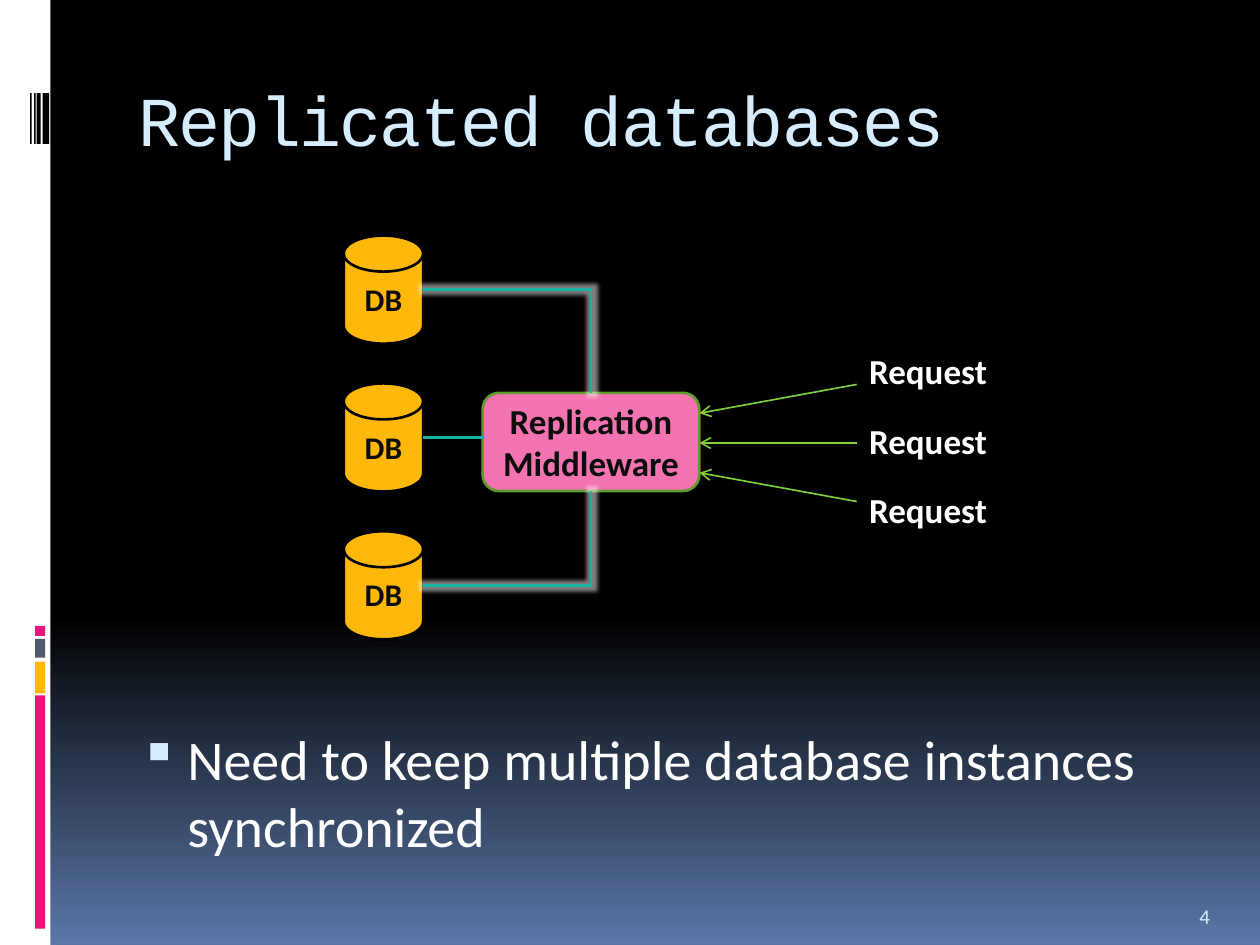
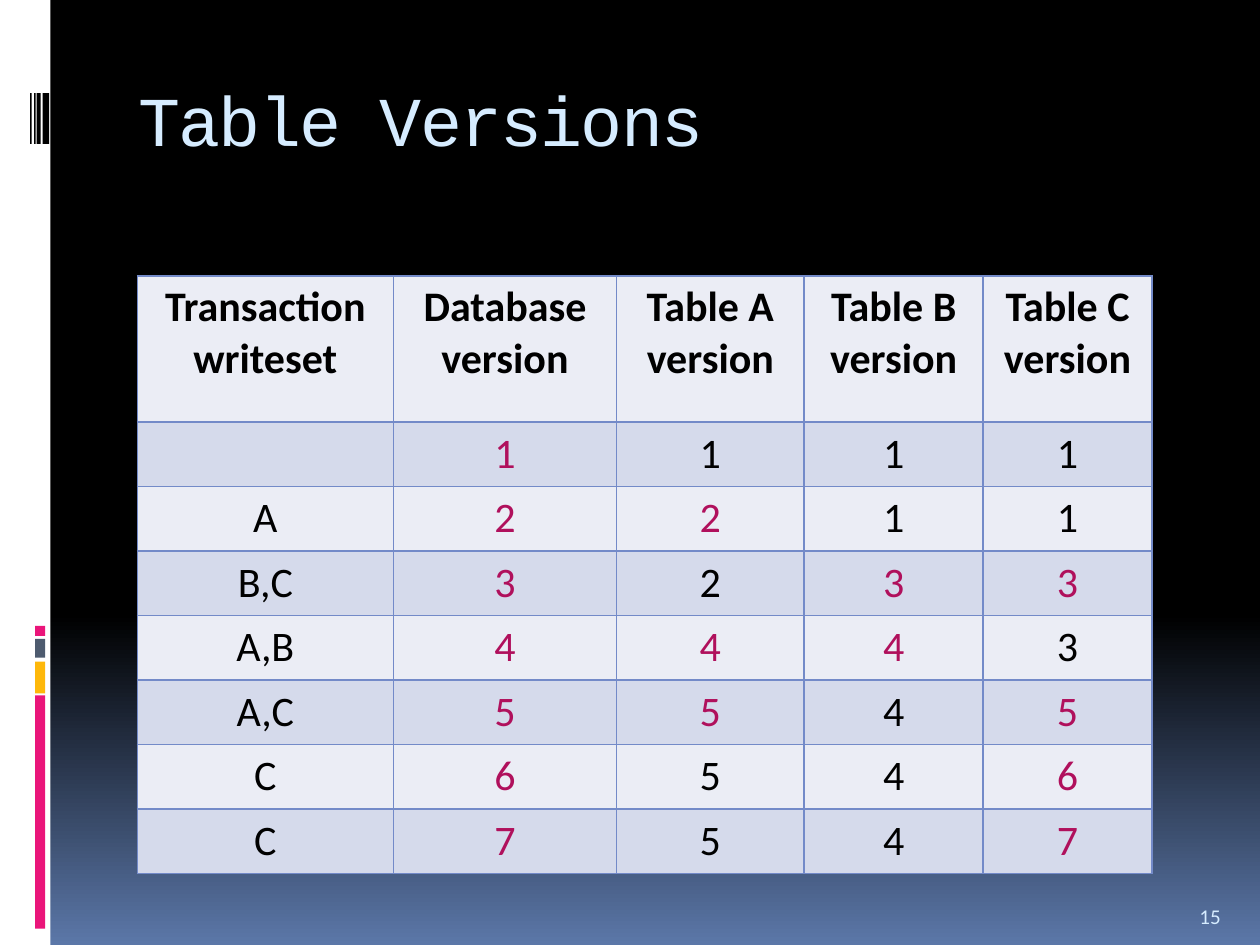
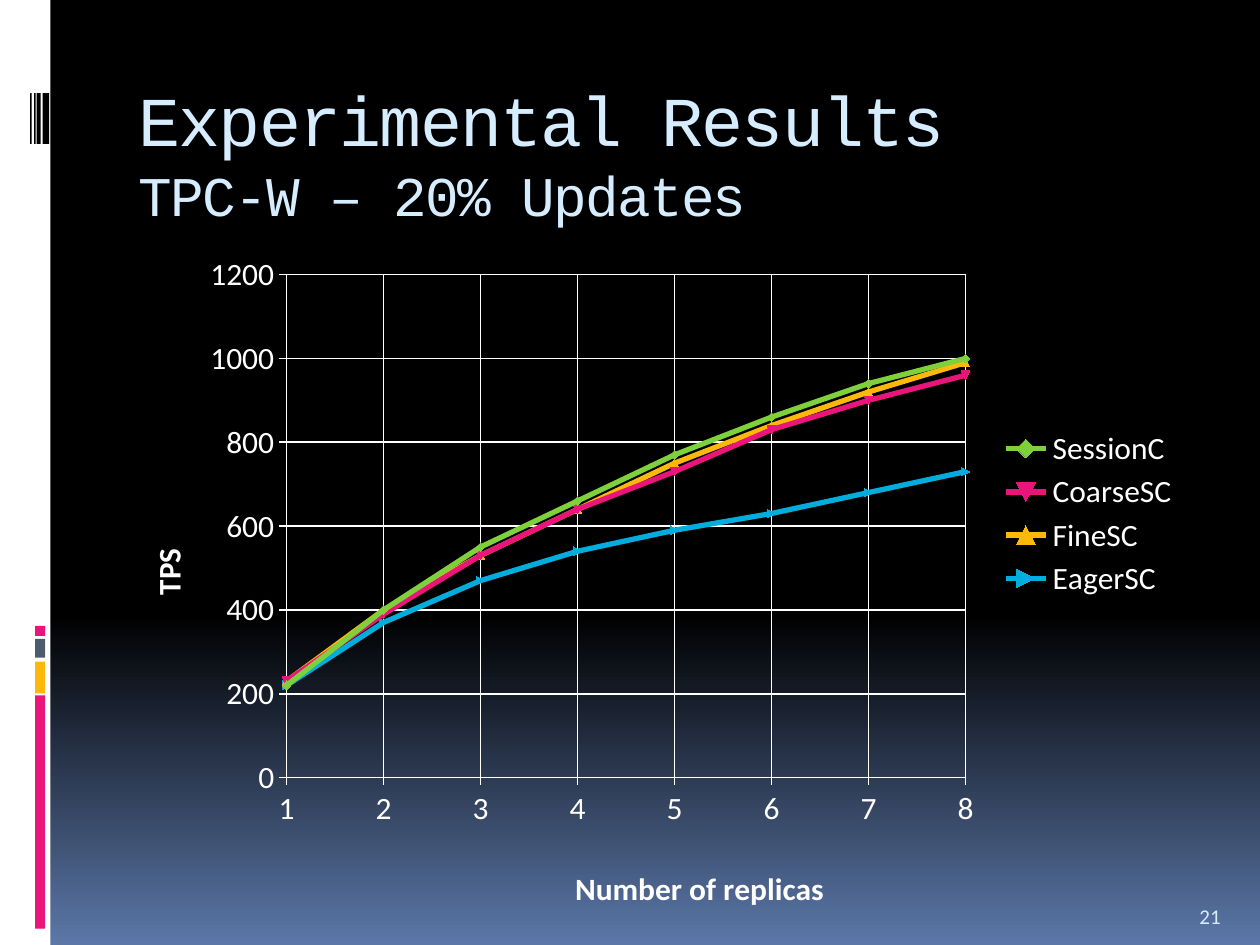
"""Builds three slides on replicated databases: a diagram, a table and a chart."""
import copy

import lxml.etree
import pptx
import pptx.chart.data
import pptx.dml.color
import pptx.enum.chart
import pptx.enum.shapes
import pptx.enum.text
import pptx.oxml.ns
import pptx.util

Cm, Pt = pptx.util.Cm, pptx.util.Pt
RGBColor = pptx.dml.color.RGBColor
SHAPE = pptx.enum.shapes.MSO_SHAPE
CONNECTOR = pptx.enum.shapes.MSO_CONNECTOR
ANCHOR = pptx.enum.text.MSO_ANCHOR
CENTER = pptx.enum.text.PP_ALIGN.CENTER
qn = pptx.oxml.ns.qn

BLACK = RGBColor(0x00, 0x00, 0x00)
WHITE = RGBColor(0xFF, 0xFF, 0xFF)
INK = RGBColor(0x0D, 0x0D, 0x0D)
SKY = RGBColor(0xD6, 0xEC, 0xFF)
DUSK = RGBColor(0x5B, 0x77, 0xA8)
MAGENTA = RGBColor(0xEA, 0x15, 0x7A)
PINK = RGBColor(0xF2, 0x73, 0xAF)
BERRY = RGBColor(0xB0, 0x10, 0x5C)
AMBER = RGBColor(0xFE, 0xB8, 0x0A)
SLATE = RGBColor(0x4E, 0x5B, 0x6F)
GREEN = RGBColor(0x7F, 0xD1, 0x3B)
DARK_GREEN = RGBColor(0x5E, 0x9B, 0x2C)
TEAL = RGBColor(0x1A, 0xB3, 0x9F)
BLUE = RGBColor(0x00, 0xAD, 0xDC)
GRID_BLUE = RGBColor(0x73, 0x8A, 0xC8)
ROW_FILLS = RGBColor(0xEB, 0xED, 0xF5), RGBColor(0xD5, 0xDA, 0xEB)

BODY_FONT, TITLE_FONT = "Calibri", "Courier New"

SIDE_BARS = [
    (0, 0, 1.02, 19.05, WHITE),
    (0.71, 14.02, 0.2, 4.7, MAGENTA),
    (0.71, 13.34, 0.2, 0.64, AMBER),
    (0.71, 12.88, 0.2, 0.38, SLATE),
    (0.71, 12.62, 0.2, 0.2, MAGENTA),
] + [(x, 1.88, width, 1.02, BLACK)
     for x, width in [(0.86, 0.13), (0.74, 0.08), (0.69, 0.03), (0.61, 0.03)]]

DATABASES = ["DB", "DB", "DB"]
REQUESTS = ["Request", "Request", "Request"]
MIDDLEWARE = "Replication Middleware"
SYNC_POINT = "Need to keep multiple database instances synchronized"

VERSION_HEADINGS = ["Transaction\nwriteset", "Database version", "Table A version",
                    "Table B version", "Table C version"]
VERSIONS = [
    ("", 1, 1, 1, 1),
    ("A", 2, 2, 1, 1),
    ("B,C", 3, 2, 3, 3),
    ("A,B", 4, 4, 4, 3),
    ("A,C", 5, 5, 4, 5),
    ("C", 6, 5, 4, 6),
    ("C", 7, 5, 4, 7),
]
COLUMN_WIDTHS = [5.16, 4.5, 3.78, 3.61, 3.4]
HEADING_HEIGHT, ROW_HEIGHT = 2.95, 1.3

THROUGHPUT = [
    ("SessionC", GREEN, [220, 400, 550, 660, 770, 860, 940, 1000]),
    ("CoarseSC", MAGENTA, [230, 390, 530, 640, 730, 830, 900, 960]),
    ("FineSC", AMBER, [230, 400, 530, 640, 750, 840, 920, 990]),
    ("EagerSC", BLUE, [220, 370, 470, 540, 590, 630, 680, 730]),
]


def cm(*lengths):
    return [Cm(length) for length in lengths]


def style(paragraph, size, color, bold=False, font=BODY_FONT):
    for run in paragraph.runs:
        run.font.size, run.font.bold, run.font.name = Pt(size), bold, font
        run.font.color.rgb = color


def add_text(slide, box, text, size, color, bold=False, font=BODY_FONT, anchor=ANCHOR.TOP):
    frame = slide.shapes.add_textbox(*cm(*box)).text_frame
    frame.word_wrap, frame.vertical_anchor = True, anchor
    frame.text = text
    for paragraph in frame.paragraphs:
        style(paragraph, size, color, bold, font)
    return frame.paragraphs[0]


def add_block(slide, kind, box, fill, outline=None, text="", size=18):
    block = slide.shapes.add_shape(kind, *cm(*box))
    block.shadow.inherit = False
    block.fill.solid()
    block.fill.fore_color.rgb = fill
    if outline is None:
        block.line.fill.background()
    else:
        block.line.color.rgb, block.line.width = outline, Pt(1.5)
    if text:
        block.text_frame.text = text
        block.text_frame.word_wrap = True
        block.text_frame.vertical_anchor = ANCHOR.MIDDLE
        label = block.text_frame.paragraphs[0]
        label.alignment = CENTER
        style(label, size, INK, True)
    return block


def add_line(slide, kind, start, end, color, width):
    line = slide.shapes.add_connector(kind, *cm(*start, *end))
    line.line.color.rgb, line.line.width = color, Pt(width)
    effects = lxml.etree.SubElement(line._element.spPr, qn("a:effectLst"))
    return line, effects


def paint_background(master):
    fill = master.background.fill
    fill.gradient()
    fill.gradient_angle = 270
    stops = master.element.xpath("p:cSld/p:bg//a:gsLst")[0]
    stops.append(copy.deepcopy(stops[-1]))
    for stop, position, color in zip(fill.gradient_stops, (0, 0.65, 1), (BLACK, BLACK, DUSK)):
        stop.position, stop.color.rgb = position, color


def start_slide(deck, number, title, subtitle=""):
    slide = deck.slides.add_slide(deck.slide_layouts[6])
    for *box, color in SIDE_BARS:
        add_block(slide, SHAPE.RECTANGLE, box, color)
    text = f"{title}\v{subtitle}" if subtitle else title
    heading = add_text(slide, (2.54, 1.42, 21.59, 2.54), text, 40, SKY, font=TITLE_FONT)
    for run in heading.runs:
        run._r.get_or_add_rPr().set("spc", "-100")
    if subtitle:
        heading.runs[1].font.size = Pt(32)
    add_text(slide, (23.93, 17.83, 1.27, 1.02), str(number), 12, SKY, anchor=ANCHOR.BOTTOM)
    return slide


def add_bullet(paragraph):
    paragraph.space_before = Pt(7)
    properties = paragraph._p.get_or_add_pPr()
    properties.set("marL", str(Cm(1.14)))
    properties.set("indent", str(-Cm(0.97)))
    color = lxml.etree.SubElement(properties, qn("a:buClr"))
    lxml.etree.SubElement(color, qn("a:srgbClr"), val=str(SKY))
    lxml.etree.SubElement(properties, qn("a:buSzPct"), val="95000")
    lxml.etree.SubElement(properties, qn("a:buChar"), char="▪")


def link_database(slide, database, middleware, site):
    """Draws a glowing line from the right of a database to a side of the middleware."""
    start = database.left + database.width, database.top + database.height // 2
    if site == 1:
        kind, end = CONNECTOR.STRAIGHT, (middleware.left, start[1])
    else:
        edge = middleware.top + (middleware.height if site == 2 else 0)
        kind, end = CONNECTOR.ELBOW, (middleware.left + middleware.width // 2, edge)
    link, effects = add_line(slide, kind, [v / Cm(1) for v in start],
                             [v / Cm(1) for v in end], TEAL, 1.5)
    glow = lxml.etree.SubElement(effects, qn("a:glow"), rad=str(Pt(5)))
    halo = lxml.etree.SubElement(glow, qn("a:srgbClr"), val=str(WHITE))
    lxml.etree.SubElement(halo, qn("a:alpha"), val="50000")
    if kind == CONNECTOR.ELBOW:
        link._element.xpath(".//a:prstGeom")[0].set("prst", "bentConnector2")
        ends = link._element.xpath(".//p:cNvCxnSpPr")[0]
        lxml.etree.SubElement(ends, qn("a:stCxn"), id=str(database.shape_id), idx="4")
        link.end_connect(middleware, site)


def build_diagram(deck):
    slide = start_slide(deck, 4, "Replicated databases")
    add_bullet(add_text(slide, (2.39, 14.48, 21.59, 3.38), SYNC_POINT, 32, WHITE))
    middleware = add_block(slide, SHAPE.ROUNDED_RECTANGLE, (9.73, 7.92, 4.37, 1.98),
                           PINK, DARK_GREEN, MIDDLEWARE, 20)
    for row, name in enumerate(DATABASES):
        database = add_block(slide, SHAPE.FLOWCHART_MAGNETIC_DISK,
                             (6.93, 4.75 + 2.98 * row, 1.6, 2.18), AMBER, BLACK, name)
        link_database(slide, database, middleware, row)
    for row, name in enumerate(REQUESTS):
        add_text(slide, (17.27, 6.93 + 1.4 * row, 3.76, 1.12), name, 20, WHITE, True)
        offset = row - 1
        arrow, _ = add_line(slide, CONNECTOR.STRAIGHT, (17.27, 8.93 + 1.18 * offset),
                            (14.1, 8.93 + 0.6 * offset), GREEN, 0.94)
        lxml.etree.SubElement(arrow.line._get_or_add_ln(), qn("a:tailEnd"), type="arrow")


def fill_cell(cell, text, fill, color, bold):
    properties = cell._tc.get_or_add_tcPr()
    for side in ("lnL", "lnR", "lnT", "lnB"):
        border = lxml.etree.SubElement(properties, qn(f"a:{side}"), w=str(Pt(1)))
        paint = lxml.etree.SubElement(border, qn("a:solidFill"))
        lxml.etree.SubElement(paint, qn("a:srgbClr"), val=str(GRID_BLUE))
    cell.fill.solid()
    cell.fill.fore_color.rgb = fill
    cell.text_frame.text = text
    for paragraph in cell.text_frame.paragraphs:
        paragraph.alignment = CENTER
        style(paragraph, 24, color, bold)


def build_versions(deck):
    slide = start_slide(deck, 15, "Table Versions")
    rows = [VERSION_HEADINGS] + VERSIONS
    height = HEADING_HEIGHT + ROW_HEIGHT * len(VERSIONS)
    table = slide.shapes.add_table(len(rows), len(COLUMN_WIDTHS),
                                   *cm(2.77, 5.56, sum(COLUMN_WIDTHS), height)).table
    for column, width in zip(table.columns, COLUMN_WIDTHS):
        column.width = Cm(width)
    for r, values in enumerate(rows):
        table.rows[r].height = Cm(ROW_HEIGHT if r else HEADING_HEIGHT)
        for c, value in enumerate(values):
            changed = r > 0 and (c == 1 or (c > 1 and "ABC"[c - 2] in values[0]))
            fill_cell(table.cell(r, c), str(value), ROW_FILLS[r % 2],
                      BERRY if changed else BLACK, r == 0)


def place(part, index, target="", **fractions):
    """Gives a chart part a fixed place, in fractions of the chart."""
    for old in part.findall(qn("c:layout")):
        part.remove(old)
    layout = lxml.etree.Element(qn("c:layout"))
    manual = lxml.etree.SubElement(layout, qn("c:manualLayout"))
    if target:
        lxml.etree.SubElement(manual, qn("c:layoutTarget"), val=target)
    for mode in ("xMode", "yMode"):
        lxml.etree.SubElement(manual, qn(f"c:{mode}"), val="edge")
    for key, fraction in fractions.items():
        lxml.etree.SubElement(manual, qn(f"c:{key}"), val=str(fraction))
    part.insert(index, layout)


def style_axis(axis, title, low, high, step, x, y):
    axis.minimum_scale, axis.maximum_scale, axis.major_unit = low, high, step
    axis.major_tick_mark = pptx.enum.chart.XL_TICK_MARK.OUTSIDE
    axis.has_major_gridlines = True
    for line in (axis.format.line, axis.major_gridlines.format.line):
        line.color.rgb, line.width = WHITE, Pt(1)
    axis.axis_title.text_frame.text = title
    style(axis.axis_title.text_frame.paragraphs[0], 18, WHITE, True)
    place(axis.axis_title._element, 1, x=x, y=y)


def build_results(deck):
    slide = start_slide(deck, 21, "Experimental Results", "TPC-W – 20% Updates")
    data = pptx.chart.data.XyChartData()
    for name, _, rates in THROUGHPUT:
        series = data.add_series(name)
        for replicas, rate in enumerate(rates, 1):
            series.add_data_point(replicas, rate)
    chart = slide.shapes.add_chart(pptx.enum.chart.XL_CHART_TYPE.XY_SCATTER_LINES,
                                   *cm(2.41, 4.95, 21.59, 13.54), data).chart
    chart.has_title = False
    chart.font.size, chart.font.name, chart.font.color.rgb = Pt(18), BODY_FONT, WHITE
    chart.plots[0].vary_by_categories = False
    for number, (series, (_, color, _)) in enumerate(zip(chart.plots[0].series, THROUGHPUT), 1):
        series.smooth = False
        series.format.line.color.rgb, series.format.line.width = color, Pt(3)
        series.marker.size = 5
        series.marker.format.fill.solid()
        series.marker.format.fill.fore_color.rgb = color
        series.marker.format.line.color.rgb = color
        series._element.find(qn("c:idx")).set("val", str(number))
    style_axis(chart.category_axis, "Number of replicas", 1, 8, 1, 0.42, 0.93)
    style_axis(chart.value_axis, "TPS", 0, 1200, 200, 0.02, 0.45)
    rotated = chart.value_axis.axis_title.text_frame._txBody.bodyPr
    rotated.set("rot", "-5400000")
    rotated.set("vert", "horz")
    chart.has_legend = True
    chart.legend.position = pptx.enum.chart.XL_LEGEND_POSITION.RIGHT
    chart.legend.include_in_layout = False
    place(chart.legend._element, 1, x=0.81, y=0.27, w=0.19, h=0.27)
    plot_area = chart._chartSpace.xpath("c:chart/c:plotArea")[0]
    place(plot_area, 0, "inner", x=0.156, y=0.044, w=0.634, h=0.76)


def main():
    deck = pptx.Presentation()
    deck.slide_width, deck.slide_height = cm(25.4, 19.05)
    paint_background(deck.slide_master)
    build_diagram(deck)
    build_versions(deck)
    build_results(deck)
    deck.save("out.pptx")


if __name__ == "__main__":
    main()
